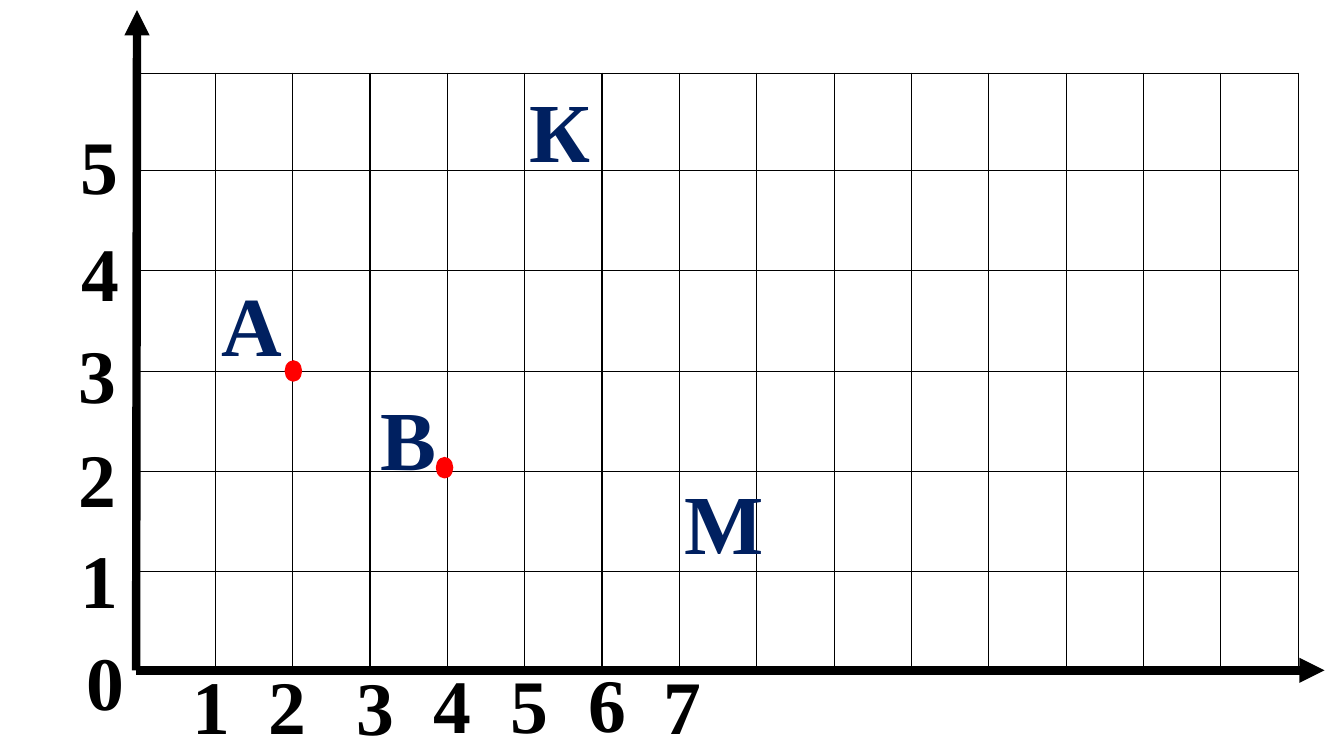
from pptx import Presentation
from pptx.dml.color import RGBColor
from pptx.enum.shapes import MSO_CONNECTOR as LINE, MSO_SHAPE as SHAPE
from pptx.oxml.ns import qn
from pptx.util import Pt
from lxml.etree import SubElement


def color(hex_code):
    return RGBColor.from_string(hex_code)


def add_label(text, left, top, width, height, size, hex_code):
    box = page.shapes.add_textbox(Pt(left), Pt(top), Pt(width), Pt(height))
    box.text_frame.word_wrap = True
    span = box.text_frame.paragraphs[0].add_run()
    span.text = text
    span.font.name = "Times New Roman"
    span.font.size = Pt(size)
    span.font.bold = True
    span.font.color.rgb = color(hex_code)


deck = Presentation()
deck.slide_width, deck.slide_height = Pt(960), Pt(540)
page = deck.slides.add_slide(deck.slide_layouts[6])

# Coordinate grid
ROWS, COLUMNS = 6, 15
COLUMN_WIDTH, TOP_ROW, ROW_HEIGHT = 55.25, 69.4, 71.7
grid = page.shapes.add_table(
    ROWS, COLUMNS, Pt(98.6), Pt(52.3),
    Pt(COLUMNS * COLUMN_WIDTH), Pt(TOP_ROW + (ROWS - 1) * ROW_HEIGHT)).table
grid.first_row = grid.horz_banding = False
for column in grid.columns:
    column.width = Pt(COLUMN_WIDTH)
for index, row in enumerate(grid.rows):
    row.height = Pt(ROW_HEIGHT if index else TOP_ROW)
for cell in grid.iter_cells():
    props = cell._tc.get_or_add_tcPr()
    for side in ("a:lnL", "a:lnR", "a:lnT", "a:lnB"):
        border = SubElement(props, qn(side), w=str(Pt(1)))
        SubElement(SubElement(border, qn("a:solidFill")), qn("a:srgbClr"), val="000000")
    cell.fill.background()

# Axes with arrowheads
for end_x, end_y in [(97.9, 7.2), (946.1, 478.8)]:
    axis = page.shapes.add_connector(
        LINE.STRAIGHT, Pt(97.2), Pt(478.8), Pt(end_x), Pt(end_y))
    axis.line.color.rgb = color("000000")
    axis.line.width = Pt(6)
    SubElement(axis.line._get_or_add_ln(), qn("a:tailEnd"), type="triangle")
    SubElement(axis._element.spPr, qn("a:effectLst"))

# Axis numbers: the vertical axis counts from 0, the horizontal one from 1
vertical = [(54.7, 450), (50.4, 377.3), (49, 305.3),
            (49, 230.4), (51.1, 157.7), (50.4, 81.4)]
horizontal = [(130.3, 467.3), (185, 467.3), (247.7, 468), (302.4, 466.6),
              (357.8, 466.6), (413.3, 465.8), (466.6, 467.3)]
for first, places in [(0, vertical), (1, horizontal)]:
    for number, (left, top) in enumerate(places, first):
        add_label(str(number), left, top, 41.8, 72.7, 54, "000000")

# Marked points
for left, top in [(203.8, 257.8), (311.8, 326.9)]:
    point = page.shapes.add_shape(SHAPE.OVAL, Pt(left), Pt(top), Pt(11.5), Pt(14.4))
    point.shadow.inherit = False
    point.fill.solid()
    point.fill.fore_color.rgb = color("FF0000")
    point.line.color.rgb = color("FF0000")
    point.line.width = Pt(1)

# Point names
for name, left, top, width in [("А", 151.2, 190.8, 49), ("В", 265, 272.2, 54.7),
                               ("К", 370.8, 52.6, 58.3), ("М", 481.7, 332.6, 72)]:
    add_label(name, left, top, width, 80, 60, "002060")

deck.save("out.pptx")
